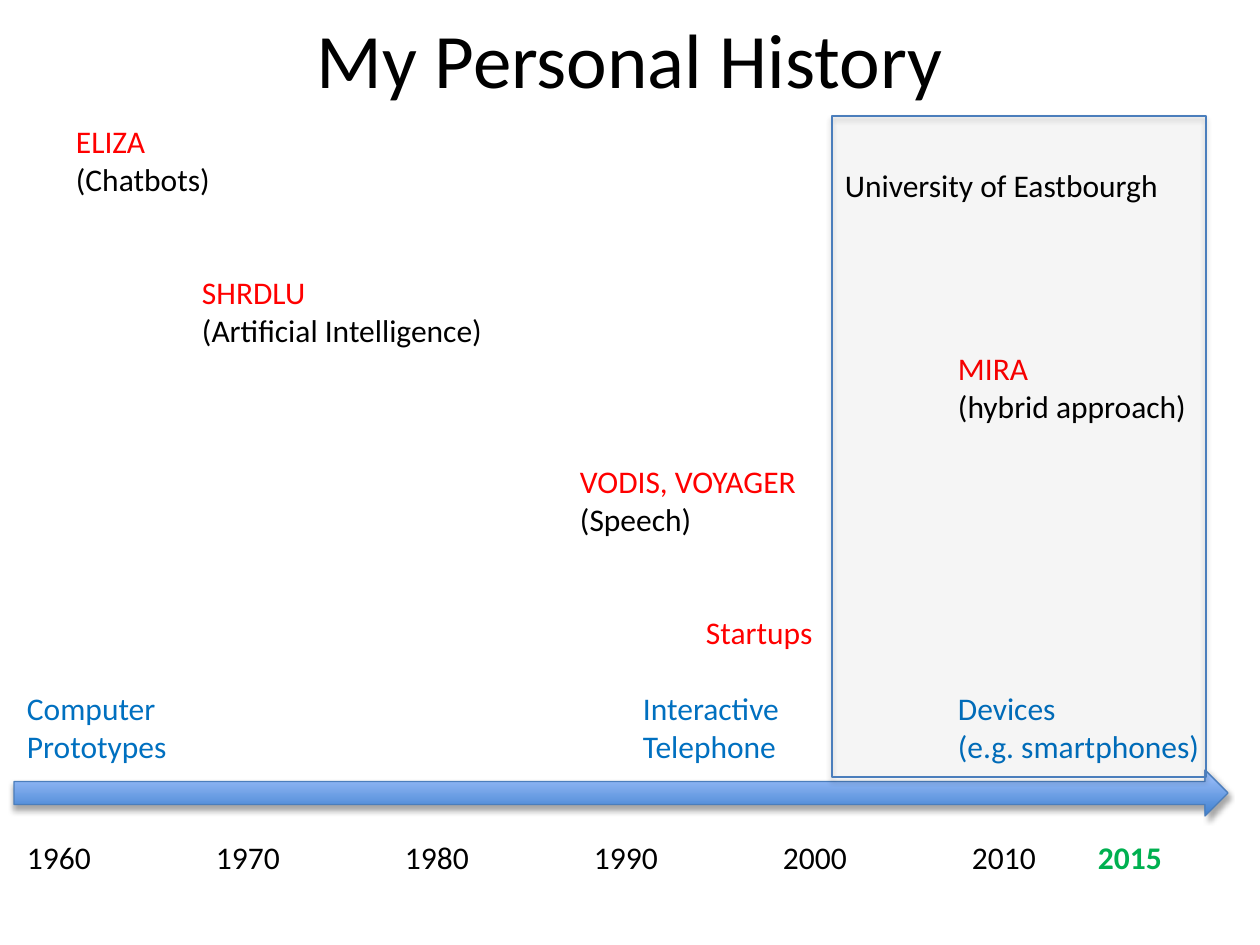
from lxml import etree
from pptx import Presentation
from pptx.dml.color import RGBColor
from pptx.enum.shapes import MSO_SHAPE
from pptx.enum.text import MSO_ANCHOR, PP_ALIGN
from pptx.oxml.ns import qn
from pptx.util import Pt

RECTANGLE = MSO_SHAPE.RECTANGLE
RIGHT_ARROW = MSO_SHAPE.RIGHT_ARROW
TOP, MIDDLE = MSO_ANCHOR.TOP, MSO_ANCHOR.MIDDLE
LEFT, CENTER = PP_ALIGN.LEFT, PP_ALIGN.CENTER

BLACK = RGBColor(0x00, 0x00, 0x00)
RED = RGBColor(0xFF, 0x00, 0x00)
BLUE = RGBColor(0x00, 0x70, 0xC0)
GREEN = RGBColor(0x00, 0xB0, 0x50)
OUTLINE = RGBColor(0x4B, 0x7E, 0xBC)
ARROW_DARK = RGBColor(0x3F, 0x80, 0xCE)
ARROW_LIGHT = RGBColor(0xA4, 0xC4, 0xFF)

FONT = "Calibri"
EMU_PER_PX = 914400 / 126
TAB = 63
LINE_PITCH = 37.8
TEXT_LEFT, TEXT_TOP = 13, 122
AXIS_LEFT, YEARS_TOP = 27, 838

MILESTONES = [
    (1, 0, 200, [("ELIZA", RED), ("(Chatbots)", BLACK)]),
    (3, 4, 320, [("SHRDLU", RED), ("(Artificial Intelligence)", BLACK)]),
    (15, 6, 245, [("MIRA", RED), ("(hybrid approach)", BLACK)]),
    (9, 9, 245, [("VODIS, VOYAGER", RED), ("(Speech)", BLACK)]),
    (11, 13, 120, [("Startups", RED)]),
    (10, 15, 180, [("Interactive", BLUE), ("Telephone", BLUE)]),
    (15, 15, 250, [("Devices", BLUE), ("(e.g. smartphones)", BLUE)]),
]


def px(length):
    return round(length * EMU_PER_PX)


def place(shape, left, top, width, height):
    shape.left, shape.top = px(left), px(top)
    shape.width, shape.height = px(width), px(height)


def write_lines(frame, lines, size=18, bold=False, align=LEFT):
    for index, (text, color) in enumerate(lines):
        para = frame.paragraphs[0] if index == 0 else frame.add_paragraph()
        para.alignment = align
        span = para.add_run()
        span.text = text
        span.font.name = FONT
        span.font.size = Pt(size)
        span.font.bold = bold
        span.font.color.rgb = color


def add_label(page, left, top, width, lines, bold=False):
    height = len(lines) * LINE_PITCH
    box = page.shapes.add_textbox(px(left), px(top), px(width), px(height))
    frame = box.text_frame
    frame.word_wrap = True
    frame.vertical_anchor = TOP
    frame.margin_left = frame.margin_right = 0
    frame.margin_top = frame.margin_bottom = 0
    write_lines(frame, lines, bold=bold)


def set_alpha(color, percent):
    etree.SubElement(color, qn("a:alpha"), val=str(percent * 1000))


def add_shadow(shape):
    shape.shadow.inherit = False
    effects = shape.element.spPr.find(qn("a:effectLst"))
    shadow = etree.SubElement(
        effects, qn("a:outerShdw"), blurRad=str(Pt(3.1)), dist=str(Pt(1.8)),
        dir="5400000", rotWithShape="0")
    color = etree.SubElement(shadow, qn("a:srgbClr"), val=str(BLACK))
    set_alpha(color, 35)


def add_outlined(page, kind, left, top, width, height):
    shape = page.shapes.add_shape(kind, px(left), px(top), px(width), px(height))
    shape.line.color.rgb = OUTLINE
    shape.line.width = Pt(0.75)
    add_shadow(shape)
    return shape


def add_time_arrow(page):
    fill = add_outlined(page, RIGHT_ARROW, 14, 770, 1214, 46).fill
    fill.gradient()
    fill.gradient_angle = 90
    for stop, color in zip(fill.gradient_stops, (ARROW_DARK, ARROW_LIGHT)):
        stop.color.rgb = color


def add_period(page):
    period = add_outlined(page, RECTANGLE, 832, 116, 374, 661)
    period.fill.solid()
    period.fill.fore_color.rgb = BLACK
    solid = period.element.spPr.find(qn("a:solidFill"))
    set_alpha(solid.find(qn("a:srgbClr")), 3)


def add_years(page):
    decades = [(str(year), 3 * index, BLACK)
               for index, year in enumerate(range(1960, 2011, 10))]
    for year, tabs, color in decades + [("2015", 17, GREEN)]:
        add_label(page, AXIS_LEFT + tabs * TAB, YEARS_TOP, 80,
                  [(year, color)], bold=color == GREEN)


def add_title(page, text):
    title = page.shapes.title
    place(title, 63, 0, 1134, 116)
    title.text_frame.vertical_anchor = MIDDLE
    write_lines(title.text_frame, [(text, BLACK)], size=44, align=CENTER)


def main():
    deck = Presentation()
    deck.slide_width, deck.slide_height = px(1260), px(945)
    page = deck.slides.add_slide(deck.slide_layouts[5])
    add_title(page, "My Personal History")
    add_time_arrow(page)
    add_years(page)
    for tabs, row, width, lines in MILESTONES:
        add_label(page, TEXT_LEFT + tabs * TAB, TEXT_TOP + row * LINE_PITCH,
                  width, lines)
    add_label(page, AXIS_LEFT, TEXT_TOP + 15 * LINE_PITCH, 180,
              [("Computer", BLUE), ("Prototypes", BLUE)])
    add_period(page)
    add_label(page, 845, 166, 350, [("University of Eastbourgh", BLACK)])
    deck.save("out.pptx")


if __name__ == "__main__":
    main()
